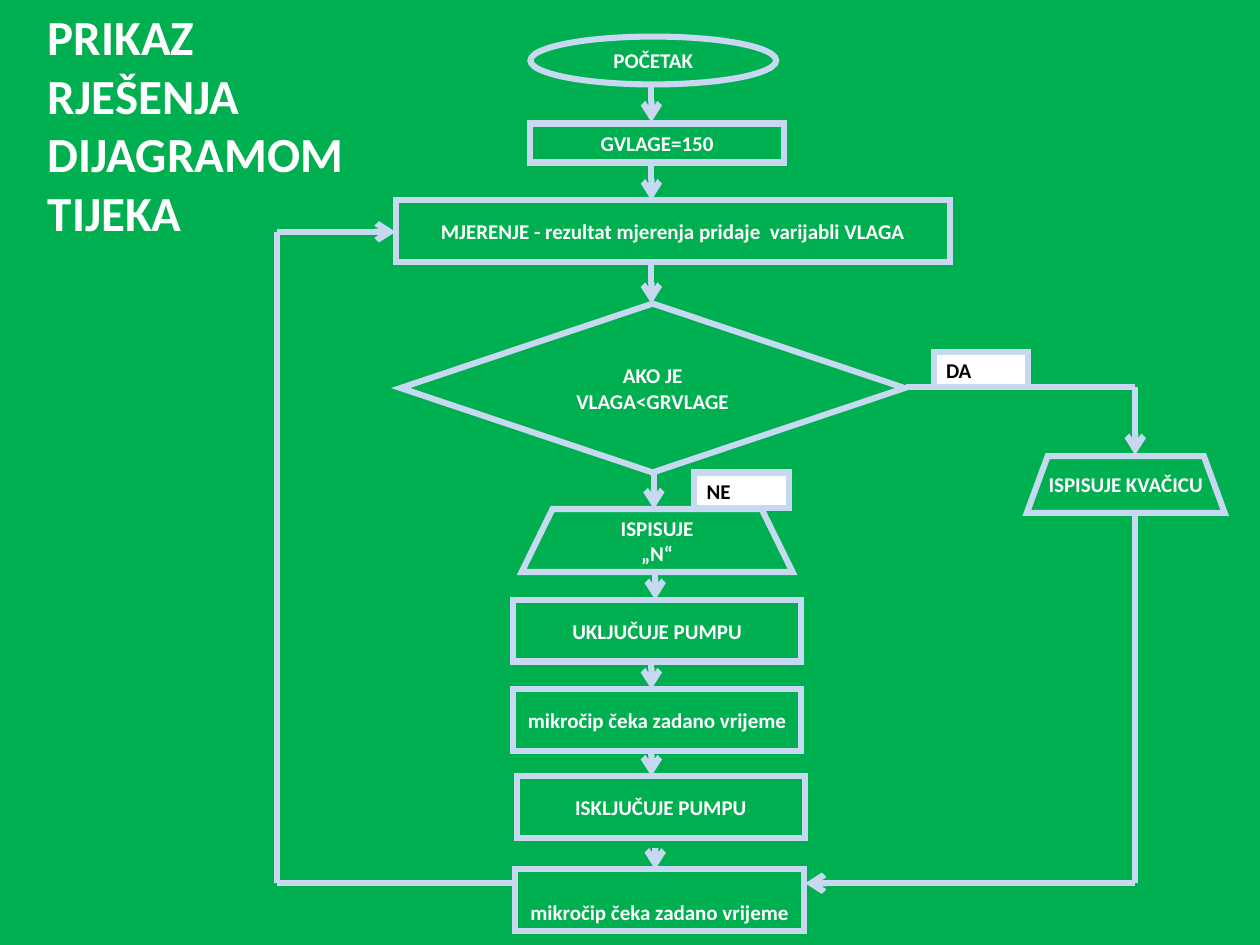
from dataclasses import dataclass

from lxml import etree
from pptx import Presentation
from pptx import util as u
from pptx.dml.color import RGBColor
from pptx.enum import shapes, text
from pptx.oxml import ns

COLUMNS, ROWS = 100, 75
COLOURS = {"ground": "00B050", "outline": "C6D9F1", "light": "FFFFFF", "dark": "000000"}
FONT = "Calibri"
OUTLINE = u.Pt(3.5)

deck = Presentation()
deck.slide_width, deck.slide_height = u.Inches(10), u.Inches(7.5)
CELL_X = deck.slide_width / COLUMNS
CELL_Y = deck.slide_height / ROWS


@dataclass
class Step:
    """A flowchart box, placed in grid columns and rows."""
    words: str
    left: float
    top: float
    width: float
    height: float
    kind: str = "box"
    slant: float = 0  # columns by which each side of a trapezoid leans in
    inset_top: float = 0


@dataclass
class Link:
    """A straight line through grid points, with an arrowhead if wanted."""
    x1: float
    y1: float
    x2: float
    y2: float
    arrow: bool = True


PRESETS = {
    "box": shapes.MSO_SHAPE.RECTANGLE,
    "label": shapes.MSO_SHAPE.RECTANGLE,
    "start": shapes.MSO_SHAPE.OVAL,
    "decision": shapes.MSO_SHAPE.FLOWCHART_DECISION,
}
WAIT = "mikročip čeka zadano vrijeme"
PUMP = {"width": 22.9, "height": 4.9}

STEPS = [
    Step("POČETAK", 42.1, 2.9, 19.5, 3.8, "start"),
    Step("GVLAGE=150", 42.1, 9.8, 20.1, 3.1),
    Step("MJERENJE - rezultat mjerenja pridaje  varijabli VLAGA", 31.4, 15.9, 44, 4.9),
    Step("AKO JE\nVLAGA<GRVLAGE", 31.8, 24.1, 40, 13.4, "decision"),
    Step("ISPISUJE KVAČICU", 81.5, 36.2, 15.7, 4.5, "trapezoid", slant=1.65),
    Step("ISPISUJE\n„N“", 41.4, 40.4, 21.5, 5, "trapezoid", slant=2.45),
    Step("UKLJUČUJE PUMPU", 40.7, 47.6, **PUMP),
    Step(WAIT, 40.7, 54.7, **PUMP),
    Step("ISKLJUČUJE PUMPU", 41, 61.6, **PUMP),
    Step(WAIT, 40.9, 69, **PUMP, inset_top=1.9),
    Step("DA", 74.1, 27.9, 7.5, 2.8, "label"),
    Step("NE", 55.1, 37.5, 7.5, 2.8, "label"),
]

# Downward arrows of the main flow: column, first row, last row
DOWN = [
    (51.7, 6.7, 9.7), (51.7, 13, 15.9), (51.7, 20.8, 24.1), (51.9, 37.5, 40.4),
    (52, 45.4, 47.6), (51.7, 52.5, 54.7), (51.7, 59.6, 61.6), (52, 67.4, 69),
]
YES, LOOP = 90.1, 22  # columns of the right branch and of the way back
BACK, MEASURE, BRANCH = 70.1, 18.4, 30.7  # rows where they turn
LINKS = [Link(x, top, x, bottom) for x, top, bottom in DOWN] + [
    Link(71.9, BRANCH, YES, BRANCH, arrow=False),
    Link(YES, BRANCH, YES, 36.1),
    Link(YES, 40.7, YES, BACK, arrow=False),
    Link(YES, BACK, 63.9, BACK),
    Link(41, BACK, LOOP, BACK, arrow=False),
    Link(LOOP, BACK, LOOP, MEASURE, arrow=False),
    Link(LOOP, MEASURE, 31.4, MEASURE),
]


def colour(name: str) -> RGBColor:
    return RGBColor.from_string(COLOURS[name])


def across(columns: float) -> int:
    return round(columns * CELL_X)


def down(rows: float) -> int:
    return round(rows * CELL_Y)


def format_text(frame, size: float, shade: str, align) -> None:
    for para in frame.paragraphs:
        para.alignment = align
        for span in para.runs:
            span.font.name, span.font.size, span.font.bold = FONT, u.Pt(size), True
            span.font.color.rgb = colour(shade)


def format_line(line) -> etree._Element:
    line.color.rgb = colour("outline")
    line.width = OUTLINE
    return line._get_or_add_ln()


def draw_trapezoid(page, step: Step):
    right, bottom = step.left + step.width, step.top + step.height
    builder = page.shapes.build_freeform(across(step.left), down(bottom))
    builder.add_line_segments([
        (across(step.left + step.slant), down(step.top)),
        (across(right - step.slant), down(step.top)),
        (across(right), down(bottom)),
    ], close=True)
    return builder.convert_to_shape()


def draw_step(page, step: Step) -> None:
    if step.kind == "trapezoid":
        box = draw_trapezoid(page, step)
    else:
        box = page.shapes.add_shape(PRESETS[step.kind], across(step.left), down(step.top),
                                    across(step.width), down(step.height))
    box.shadow.inherit = False
    etree.SubElement(format_line(box.line), ns.qn("a:miter"), lim="800000")
    is_label = step.kind == "label"
    if is_label:
        box.fill.solid()
        box.fill.fore_color.rgb = colour("light")
    else:
        box.fill.background()

    frame = box.text_frame
    frame.text = step.words
    frame.word_wrap = True
    frame.margin_left = frame.margin_right = across(1 if is_label else 0.5)
    frame.margin_top = down(0.5 if is_label else step.inset_top)
    frame.margin_bottom = 0
    frame.vertical_anchor = text.MSO_ANCHOR.TOP if is_label else text.MSO_ANCHOR.MIDDLE
    format_text(frame, 12, "dark" if is_label else "light",
                text.PP_ALIGN.LEFT if is_label else text.PP_ALIGN.CENTER)


def draw_link(page, link: Link) -> None:
    line = page.shapes.add_connector(shapes.MSO_CONNECTOR.STRAIGHT, across(link.x1),
                                     down(link.y1), across(link.x2), down(link.y2))
    outline = format_line(line.line)
    if link.arrow:
        etree.SubElement(outline, ns.qn("a:tailEnd"), type="arrow")
    etree.SubElement(line._element.spPr, ns.qn("a:effectLst"))


def draw_title(page) -> None:
    title = page.shapes.title
    title.left, title.top = across(2.8), 0
    title.width, title.height = across(27.2), down(19.9)
    frame = title.text_frame
    frame.text = "PRIKAZ RJEŠENJA DIJAGRAMOM TIJEKA"
    frame.word_wrap = True
    frame.auto_size = text.MSO_AUTO_SIZE.NONE
    frame.vertical_anchor = text.MSO_ANCHOR.TOP
    format_text(frame, 28, "light", text.PP_ALIGN.LEFT)


def main() -> None:
    page = deck.slides.add_slide(deck.slide_layouts.get_by_name("Title Only"))
    page.background.fill.solid()
    page.background.fill.fore_color.rgb = colour("ground")

    # Title, then boxes, then the lines between them
    draw_title(page)
    for step in STEPS:
        draw_step(page, step)
    for link in LINKS:
        draw_link(page, link)
    deck.save("out.pptx")


if __name__ == "__main__":
    main()
